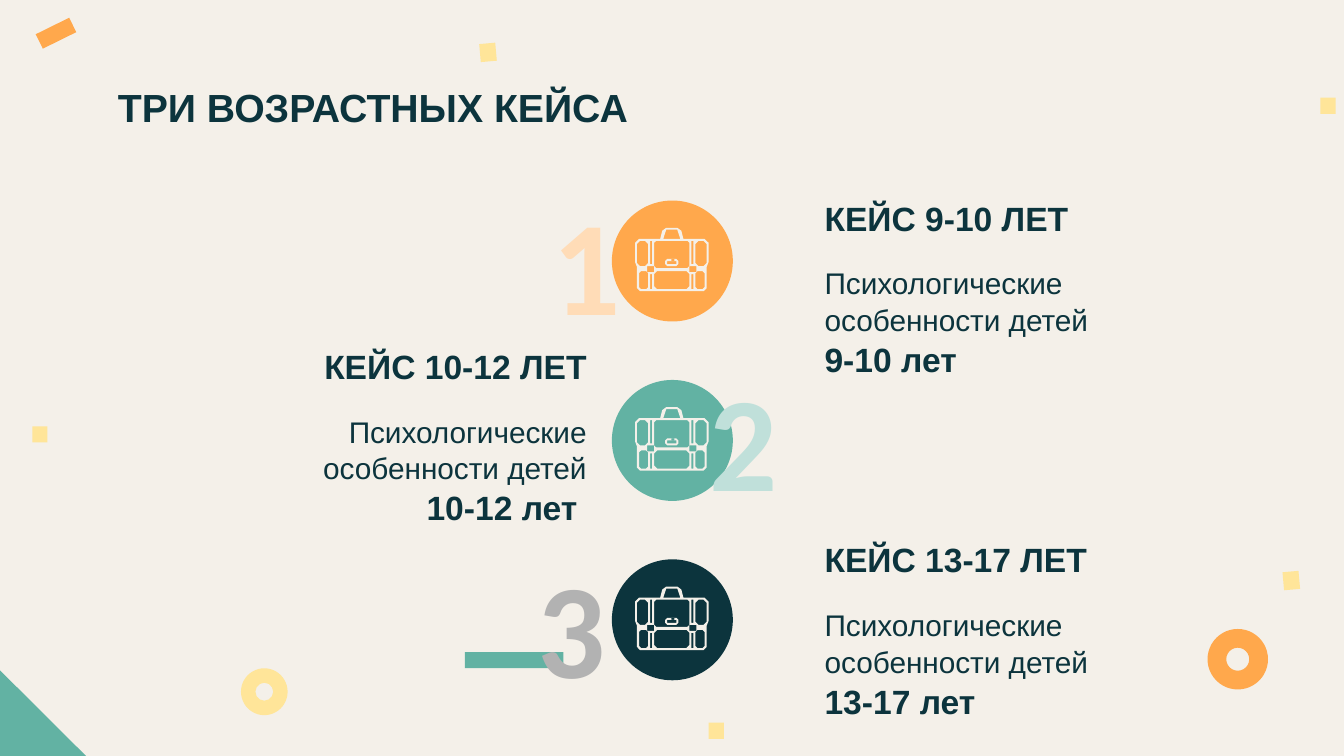
from pptx import Presentation
from pptx.dml.color import RGBColor
from pptx.enum.shapes import MSO_SHAPE as SHAPE
from pptx.enum.text import MSO_ANCHOR as ANCHOR, MSO_AUTO_SIZE as FIT, PP_ALIGN as ALIGN
from pptx.util import Inches, Pt

W, H = Inches(13.333), Inches(7.5)
COLORS = {
    "paper": "F4F0E9", "dark": "0C343D", "orange": "FFA84C", "teal": "62B2A3",
    "yellow": "FFE599", "peach": "FFDCB7", "mint": "C0E0DA", "grey": "B2B2B2",
}
TITLE = "ТРИ ВОЗРАСТНЫХ КЕЙСА"
TOPIC = "Психологические особенности детей"

# Percent of the slide: first circle, row step, and the text columns
CIRCLE_LEFT, CIRCLE_TOP, ROW_STEP = 45.53, 26.53, 23.73
HEAD_W, HEAD_H, BODY_W, BODY_H = 31.28, 8.53, 29.4, 11.2
LEFT_COL, RIGHT_COL = 13.35, 60.38

# ages, circle, number colour, number left and top, text top, on the left
CASES = [
    ("9-10", "orange", "peach", 40.35, 22.67, 24.67, False),
    ("10-12", "teal", "mint", 52.05, 45.87, 44.27, True),
    ("13-17", "dark", "grey", 39.22, 70.67, 69.87, False),
]

# Left half of the bag's outline and handle, in hundredths of an inch
BAG_W = 73
BODY = [(31, 0), (27, 3), (25, 11), (4, 11), (0, 15), (0, 34), (2, 39), (2, 60), (5, 63)]
HANDLE = [(31, 2), (28, 11)]
# left, top, right, bottom, corner cut
SIDE_PARTS = [
    (15, 13, 17, 36, 0),  # strap
    (2, 13, 13, 38, 3),   # flap
    (12, 38, 19, 44, 0),  # buckle
    (4, 43, 13, 61, 2),   # pocket
    (15, 46, 17, 61, 0),  # strap end
]
MIDDLE_PARTS = [
    (19, 13, 54, 40, 2),  # flap
    (19, 43, 54, 61, 3),  # pocket
    (30, 31, 43, 38, 2),  # clasp
    (32, 33, 41, 36, 0),  # clasp hole
    (36, 31, 39, 33, 0),  # clasp gap
]


def rgb(name):
    return RGBColor.from_string(COLORS[name])


def place(left, top, width, height):
    """Turn percents of the slide into EMU."""
    return [round(v * side / 100) for v, side in zip((left, top, width, height), (W, H, W, H))]


def paint(sp, color):
    sp.fill.solid()
    sp.fill.fore_color.rgb = rgb(color)
    sp.line.fill.background()
    sp.shadow.inherit = False


def add_figure(slide, kind, color, box, rotation=0):
    sp = slide.shapes.add_shape(kind, *place(*box))
    sp.rotation = rotation
    if kind == SHAPE.DONUT:
        sp.adjustments[0] = 0.31
    paint(sp, color)


def add_decor(slide):
    add_figure(slide, SHAPE.RECTANGLE, "teal", (34.58, 86.27, 7.35, 2.13))
    add_figure(slide, SHAPE.RECTANGLE, "orange", (2.78, 3.33, 2.78, 2.13), 333.7)
    add_figure(slide, SHAPE.RIGHT_TRIANGLE, "teal", (0, 88.67, 6.4, 11.33))
    add_figure(slide, SHAPE.DONUT, "orange", (89.85, 83.2, 4.5, 8))
    add_figure(slide, SHAPE.DONUT, "yellow", (17.93, 88.4, 3.47, 6.2))
    for left, top in [(2.4, 56.4), (98.25, 12.93), (52.73, 95.6)]:
        add_figure(slide, SHAPE.RECTANGLE, "yellow", (left, top, 1.13, 2.13))
    for left, top in [(35.63, 5.87), (95.4, 75.73)]:
        add_figure(slide, SHAPE.RECTANGLE, "yellow", (left, top, 1.35, 2.13), 84.9)


def write(sp, lines, color="dark", font="Arial", align=ALIGN.LEFT, anchor=ANCHOR.TOP,
          inset=0.13, wrap=True, spacing=None):
    """Fill a shape with (text, size, bold) paragraphs."""
    tf = sp.text_frame
    tf.auto_size, tf.word_wrap, tf.vertical_anchor = FIT.NONE, wrap, anchor
    tf.margin_left = tf.margin_right = tf.margin_top = tf.margin_bottom = Inches(inset)
    for i, (text, size, bold) in enumerate(lines):
        p = tf.add_paragraph() if i else tf.paragraphs[0]
        p.alignment = align
        p.line_spacing = spacing
        r = p.add_run()
        r.text = text
        r.font.name, r.font.size, r.font.bold = font, Pt(size), bold
        r.font.color.rgb = rgb(color)


def add_text(slide, box, lines, **fmt):
    write(slide.shapes.add_textbox(*place(*box)), lines, **fmt)


def mirror(points):
    return [(BAG_W - x, y) for x, y in reversed(points)]


def cut_rect(left, top, right, bottom, cut):
    """Corner points of a rectangle with bevelled corners."""
    return [(left + cut, top), (right - cut, top), (right, top + cut), (right, bottom - cut),
            (right - cut, bottom), (left + cut, bottom), (left, bottom - cut), (left, top + cut)]


def bag_contours():
    """Nested contours, which alternate between fill and hole."""
    sides = [cut_rect(*part) for part in SIDE_PARTS]
    middle = [cut_rect(*part) for part in MIDDLE_PARTS]
    return [BODY + mirror(BODY), HANDLE + mirror(HANDLE), *sides, *map(mirror, sides), *middle]


def add_bag(slide, top):
    first, *others = bag_contours()
    builder = slide.shapes.build_freeform(*first[0], scale=Inches(0.01))
    builder.add_line_segments(first[1:], close=True)
    for start, *rest in others:
        builder.move_to(*start)
        builder.add_line_segments(rest, close=True)
    left, top, *_ = place(47.25, top, 0, 0)
    paint(builder.convert_to_shape(left, top), "paper")


def add_case(slide, row, case):
    ages, circle, tint, num_left, num_top, top, on_left = case
    circle_top = CIRCLE_TOP + row * ROW_STEP
    add_figure(slide, SHAPE.OVAL, circle, (CIRCLE_LEFT, circle_top, 9, 16))
    add_bag(slide, circle_top + 3.6)
    left = LEFT_COL if on_left else RIGHT_COL
    body_left = left + HEAD_W - BODY_W if on_left else left
    align = ALIGN.RIGHT if on_left else ALIGN.LEFT
    age_line = f"{ages} лет " if on_left else f"{ages} лет"
    add_text(slide, (left, top, HEAD_W, HEAD_H), [(f"КЕЙС {ages} ЛЕТ", 24, True)],
             align=align, anchor=ANCHOR.BOTTOM)
    add_text(slide, (body_left, top + HEAD_H, BODY_W, BODY_H),
             [(TOPIC, 21.3, False), (age_line, 24, True)], align=align, spacing=1.03)
    add_text(slide, (num_left, num_top, 6.6, 22.93), [(str(row + 1), 96, True)],
             color=tint, font="Calibri", inset=0.1, wrap=False)


def main():
    prs = Presentation()
    prs.slide_width, prs.slide_height = W, H
    slide = prs.slides.add_slide(prs.slide_layouts[5])
    slide.background.fill.solid()
    slide.background.fill.fore_color.rgb = rgb("paper")
    add_decor(slide)
    title = slide.shapes.title
    title.left, title.top, title.width, title.height = place(7.8, 8.67, 74.25, 11.2)
    write(title, [(TITLE, 28, True)], spacing=1.1)
    for row, case in enumerate(CASES):
        add_case(slide, row, case)
    prs.save("out.pptx")


if __name__ == "__main__":
    main()
